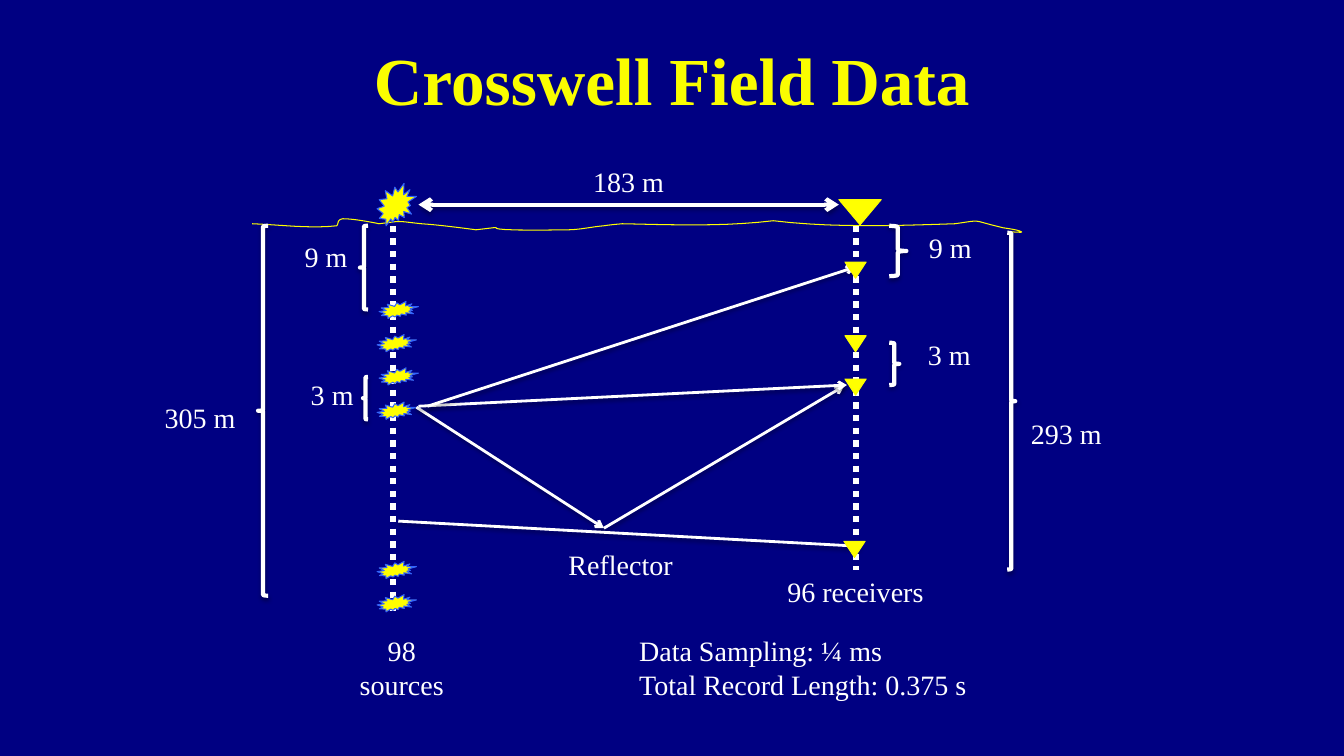
from dataclasses import dataclass

from lxml import etree
from pptx import Presentation
from pptx.dml.color import RGBColor
from pptx.enum.dml import MSO_LINE
from pptx.enum.shapes import MSO_CONNECTOR, MSO_SHAPE
from pptx.enum.text import MSO_ANCHOR, PP_ALIGN
from pptx.oxml.ns import qn
from pptx.util import Inches, Pt

SEAL = MSO_SHAPE.EXPLOSION2
TRIANGLE = MSO_SHAPE.ISOSCELES_TRIANGLE
LEFT_BRACE, RIGHT_BRACE = MSO_SHAPE.LEFT_BRACE, MSO_SHAPE.RIGHT_BRACE
STRAIGHT = MSO_CONNECTOR.STRAIGHT
DOTTED = MSO_LINE.ROUND_DOT
LEFT, CENTER = PP_ALIGN.LEFT, PP_ALIGN.CENTER


@dataclass(frozen=True)
class Theme:
    font: str = "Times New Roman"
    background: RGBColor = RGBColor(0x00, 0x00, 0x82)
    white: RGBColor = RGBColor(0xFF, 0xFF, 0xFF)
    marker: RGBColor = RGBColor(0xFF, 0xFF, 0x00)
    title: RGBColor = RGBColor(0xFA, 0xFD, 0x00)
    seal_edge: RGBColor = RGBColor(0x33, 0x65, 0xFB)
    title_size: int = 48
    label_size: int = 20
    hairline: float = 0.75
    ray: float = 2
    bold_line: float = 3
    well: float = 4.5


THEME = Theme()

# Content: lengths in inches
TITLE = "Crosswell Field Data"
GROUND_START = (2.5, 2.22)
GROUND_CURVES = [  # two control points and an end point each
    ((2.79, 2.23), (3.07, 2.27), (3.34, 2.24)),
    ((3.36, 2.22), (3.34, 2.18), (3.4, 2.17)),
    ((3.53, 2.17), (3.76, 2.22), (3.76, 2.22)),
    ((4, 2.19), (3.91, 2.19), (4.18, 2.22)),
    ((4.36, 2.23), (4.72, 2.28), (4.72, 2.28)),
    ((5.23, 2.22), (4.45, 2.3), (5.63, 2.28)),
    ((5.75, 2.28), (5.87, 2.25), (5.99, 2.24)),
    ((6.05, 2.23), (6.17, 2.22), (6.17, 2.22)),
    ((6.68, 2.23), (7.16, 2.25), (7.67, 2.19)),
    ((8.25, 2.26), (8.87, 2.24), (9.47, 2.22)),
    ((9.76, 2.18), (9.61, 2.18), (9.95, 2.26)),
    ((10.01, 2.27), (10.1, 2.28), (10.13, 2.3)),
    ((10.15, 2.31), (10.05, 2.3), (10.01, 2.3)),
]
CURVE_STEPS = 10
WELL_TOP = 2.24
WELLS = [(3.9, 6.07), (8.49, 5.65)]  # x, bottom
SOURCES = [(3.76, 2.99), (3.74, 3.32), (3.76, 3.65), (3.74, 3.99),
           (3.74, 5.57), (3.74, 5.9)]
SOURCE_SIZE = (0.39, 0.17)
SURFACE_SOURCE = (3.74, 1.82, 0.39, 0.42)
RECEIVERS = [(8.38, 2.6), (8.38, 3.33), (8.38, 3.76), (8.37, 5.37)]
RECEIVER_SIZE = (0.21, 0.16)
SURFACE_RECEIVER = (8.32, 1.98, 0.42, 0.25)
BRACES = [
    (LEFT_BRACE, (3.57, 2.24, 0.08, 0.83)),
    (LEFT_BRACE, (3.6, 3.74, 0.05, 0.42)),
    (LEFT_BRACE, (2.56, 2.24, 0.1, 3.67)),
    (RIGHT_BRACE, (9.99, 2.31, 0.08, 3.34)),
    (RIGHT_BRACE, (8.82, 2.24, 0.17, 0.5)),
    (RIGHT_BRACE, (8.82, 3.4, 0.1, 0.42)),
]
SPACING_ARROW = ((4.15, 2.03), (8.32, 2.03))
RAYS = [
    ((4.13, 4.04), (5.99, 5.24)),
    ((5.99, 5.24), (8.37, 3.83)),
    ((4.15, 4.03), (8.4, 3.82)),
    ((4.24, 4.03), (8.48, 2.65)),
]
REFLECTOR = ((3.95, 5.17), (8.53, 5.42))
LABELS = [  # lines, box, alignment
    (["9 m"], (2.65, 2.33, 1.17, 0.44), CENTER),
    (["3 m"], (2.71, 3.7, 1.17, 0.44), CENTER),
    (["305 m"], (1.4, 3.92, 1.17, 0.44), CENTER),
    (["98 sources"], (3.4, 6.24, 1.17, 0.77), CENTER),
    (["293 m"], (9.99, 4.08, 1.17, 0.44), CENTER),
    (["9 m"], (8.84, 2.24, 1.17, 0.44), CENTER),
    (["3 m"], (8.83, 3.3, 1.17, 0.44), CENTER),
    (["96 receivers"], (7.65, 5.65, 1.67, 0.44), CENTER),
    (["183 m"], (5.65, 1.58, 1.17, 0.44), CENTER),
    (["Reflector"], (5.28, 5.38, 1.75, 0.44), CENTER),
    (["Data Sampling: ¼ ms", "Total Record Length: 0.375 s"],
     (6.24, 6.24, 4.25, 0.77), LEFT),
]


def inches(values):
    return [Inches(value) for value in values]


def set_line(shape, color, width):
    shape.line.color.rgb = color
    shape.line.width = Pt(width)


def add_shadow(effects, opacity, distance):
    shadow = etree.SubElement(
        effects, qn("a:outerShdw"), blurRad=str(Pt(3.1)), dist=str(Pt(distance)),
        dir="5400000", rotWithShape="0")
    color = etree.SubElement(shadow, qn("a:srgbClr"), val="000000")
    etree.SubElement(color, qn("a:alpha"), val=str(opacity * 1000))


def add_line(shapes, ends, width, arrows=(), dash=None, shadow=None):
    start, end = ends
    line = shapes.add_connector(STRAIGHT, *inches(start + end))
    set_line(line, THEME.white, width)
    if dash:
        line.line.dash_style = dash
    properties = line.element.spPr
    for arrow in arrows:
        etree.SubElement(properties.find(qn("a:ln")), qn(arrow), type="arrow")
    effects = etree.SubElement(properties, qn("a:effectLst"))
    if shadow:
        add_shadow(effects, *shadow)


def add_marker(shapes, kind, box, edge):
    marker = shapes.add_shape(kind, *inches(box))
    marker.shadow.inherit = False
    marker.fill.solid()
    marker.fill.fore_color.rgb = THEME.marker
    set_line(marker, edge, THEME.hairline)
    if kind == TRIANGLE:
        marker.rotation = 180


def add_brace(shapes, kind, box):
    brace = shapes.add_shape(kind, *inches(box))
    brace.shadow.inherit = False
    brace.fill.background()
    set_line(brace, THEME.white, THEME.bold_line)
    add_shadow(brace.element.spPr.find(qn("a:effectLst")), 35, 1.8)


def write(frame, lines, size, color, alignment, bold=False):
    frame.word_wrap = True
    frame.vertical_anchor = MSO_ANCHOR.TOP
    frame.text = "\n".join(lines)
    for paragraph in frame.paragraphs:
        paragraph.alignment = alignment
        font = paragraph.font
        font.name, font.size, font.bold = THEME.font, Pt(size), bold
        font.color.rgb = color


def add_ground(shapes):
    points, start = [], GROUND_START
    for first, second, end in GROUND_CURVES:
        for step in range(1, CURVE_STEPS + 1):
            t = step / CURVE_STEPS
            weights = ((1 - t) ** 3, 3 * t * (1 - t) ** 2, 3 * t * t * (1 - t), t ** 3)
            corners = (start, first, second, end)
            points.append(inches(
                sum(weight * corner[axis] for weight, corner in zip(weights, corners))
                for axis in (0, 1)))
        start = end
    builder = shapes.build_freeform(*inches(GROUND_START))
    builder.add_line_segments(points, close=False)
    ground = builder.convert_to_shape()
    ground.shadow.inherit = False
    ground.fill.background()
    set_line(ground, THEME.marker, THEME.hairline)


def main():
    presentation = Presentation()
    presentation.slide_width, presentation.slide_height = inches((13.33, 7.5))
    slide = presentation.slides.add_slide(presentation.slide_layouts[5])
    slide.background.fill.solid()
    slide.background.fill.fore_color.rgb = THEME.background
    shapes = slide.shapes

    # Title
    title = shapes.title
    title.left, title.top, title.width, title.height = inches((0, 0.33, 13.33, 0.91))
    write(title.text_frame, [TITLE], THEME.title_size, THEME.title, CENTER, bold=True)

    # Ground surface, wells and sources
    add_ground(shapes)
    for x, bottom in WELLS:
        add_line(shapes, ((x, WELL_TOP), (x, bottom)), THEME.well, dash=DOTTED)
    for box in [place + SOURCE_SIZE for place in SOURCES] + [SURFACE_SOURCE]:
        add_marker(shapes, SEAL, box, THEME.seal_edge)

    # Depth braces, well spacing, rays and reflector
    for kind, box in BRACES:
        add_brace(shapes, kind, box)
    add_line(shapes, SPACING_ARROW, THEME.bold_line,
             ("a:headEnd", "a:tailEnd"), shadow=(35, 1.8))
    for ends in RAYS:
        add_line(shapes, ends, THEME.ray, ("a:tailEnd",), shadow=(38, 1.6))
    add_line(shapes, REFLECTOR, THEME.ray, shadow=(38, 1.6))

    # Receivers, above the ray tips
    for box in [place + RECEIVER_SIZE for place in RECEIVERS] + [SURFACE_RECEIVER]:
        add_marker(shapes, TRIANGLE, box, THEME.title)

    # Labels
    for lines, box, alignment in LABELS:
        label = shapes.add_textbox(*inches(box))
        write(label.text_frame, lines, THEME.label_size, THEME.white, alignment)

    presentation.save("out.pptx")


if __name__ == "__main__":
    main()
